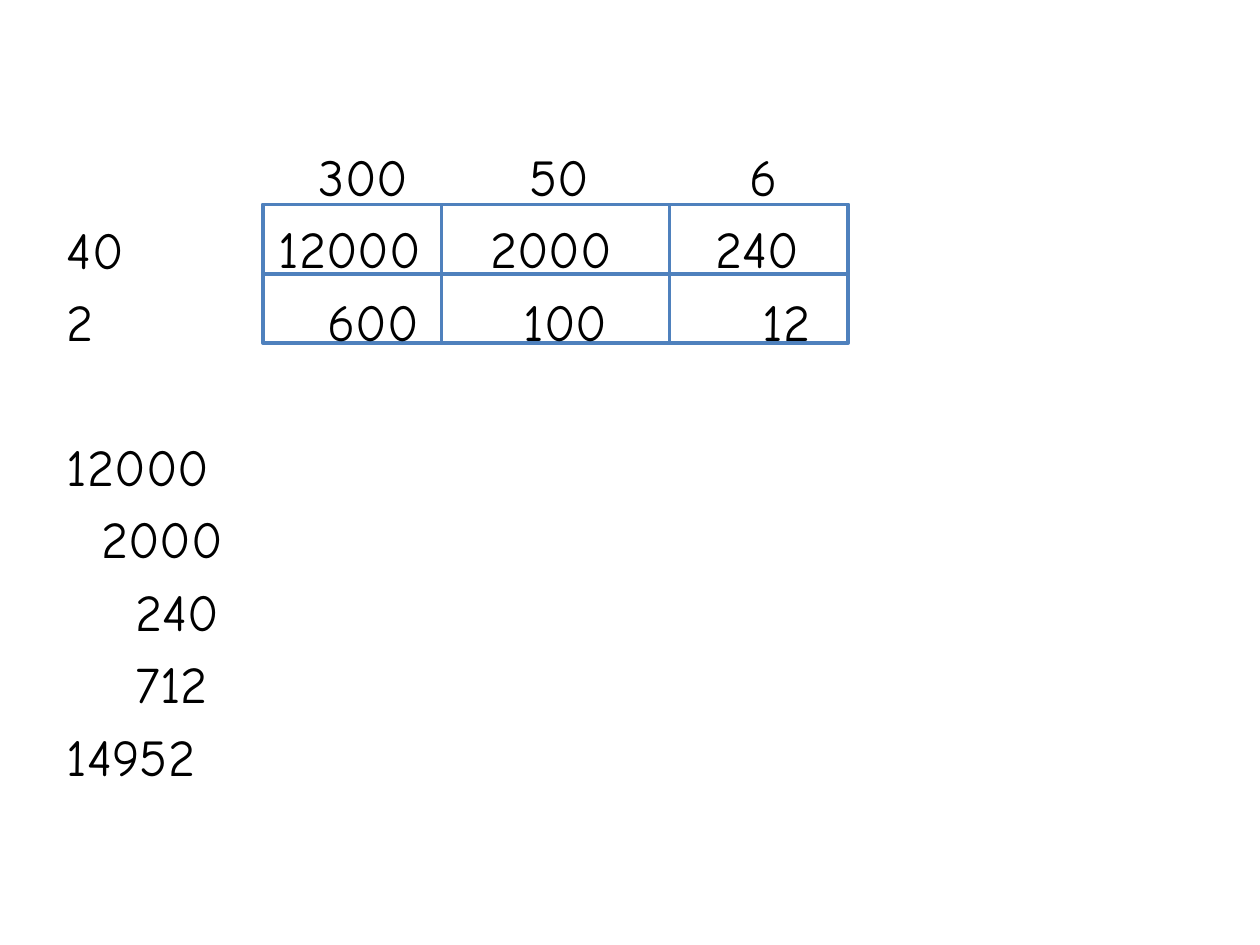
from lxml.etree import SubElement
from pptx import Presentation
from pptx.dml.color import RGBColor
from pptx.enum.shapes import MSO_SHAPE as Shape
from pptx.enum.text import MSO_ANCHOR as Anchor, MSO_AUTO_SIZE as AutoSize
from pptx.oxml.ns import qn
from pptx.util import Cm, Pt

FONT, TEXT_COLOR, GRID_COLOR = "Comic Neue", "000000", "4F81BD"
TEXT_SIZE, LINE_HEIGHT, LINE_GAP = 29.6, 35.5, 5.9

# Each row: (distance from the text edge in cm, number) for each column
GRID_NUMBERS = [
    [(5.08, "300"), (9.33, "50"), (13.75, "6")],
    [(4.27, "12000"), (8.53, "2000"), (13.08, "240")],
    [(5.26, "600"), (9.21, "100"), (14.03, "12")],
]
ROW_LABELS = ["40", "2"]
# Indent in cm, number
ADDITION = [(0, "12000"), (0.69, "2000"), (1.39, "240"), (1.39, "712"), (0, "14952")]

BODY_LEFT, BODY_TOP, SIDE_MARGIN = 1.1, 1.32, 0.25
FIRST_LINE, LINE_PITCH = 1.6, 1.46
GRID_LEFT, GRID_TOP, CELL_HEIGHT = 5.3, 4.12, 1.4
COLUMN_WIDTHS = [3.6, 4.6, 3.6]


def rgb(value):
    return RGBColor.from_string(value)


def set_frame(frame, top=0, side=0):
    frame.word_wrap = True
    frame.auto_size = AutoSize.NONE
    frame.vertical_anchor = Anchor.TOP
    frame.margin_top, frame.margin_bottom = Cm(top), Cm(0)
    frame.margin_left = frame.margin_right = Cm(side)


def add_line(frame, text, indent=0, gap=LINE_GAP):
    """Append one line, filling the empty first paragraph if there is one."""
    last = frame.paragraphs[-1]
    line = frame.add_paragraph() if last.runs else last
    line.line_spacing = Pt(LINE_HEIGHT)
    line.space_before = Pt(gap)
    line.space_after = Pt(0)
    props = line._p.get_or_add_pPr()
    props.set("marL", str(Cm(indent)))
    props.set("indent", "0")
    SubElement(props, qn("a:buNone"))
    run = line.add_run()
    run.text = text
    run.font.name = FONT
    run.font.size = Pt(TEXT_SIZE)
    run.font.color.rgb = rgb(TEXT_COLOR)


def add_labels_and_addition(slide):
    body = slide.placeholders[1]
    body.left, body.top = Cm(BODY_LEFT), Cm(BODY_TOP)
    body.width, body.height = Cm(22.86), Cm(16.2)
    frame = body.text_frame
    set_frame(frame, top=FIRST_LINE + LINE_PITCH, side=SIDE_MARGIN)
    for label in ROW_LABELS:
        add_line(frame, label)
    for index, (indent, number) in enumerate(ADDITION):
        skipped_line = LINE_HEIGHT + LINE_GAP if index == 0 else 0
        add_line(frame, number, indent, LINE_GAP + skipped_line)


def add_grid(slide):
    for column, width in enumerate(COLUMN_WIDTHS):
        left = GRID_LEFT + sum(COLUMN_WIDTHS[:column])
        for row in range(len(ROW_LABELS)):
            cell = slide.shapes.add_shape(
                Shape.RECTANGLE, Cm(left), Cm(GRID_TOP + row * CELL_HEIGHT),
                Cm(width), Cm(CELL_HEIGHT))
            cell.shadow.inherit = False
            cell.fill.background()
            cell.line.color.rgb = rgb(GRID_COLOR)
            cell.line.width = Pt(2)


def add_grid_numbers(slide):
    for row, numbers in enumerate(GRID_NUMBERS):
        top = BODY_TOP + FIRST_LINE + row * LINE_PITCH
        for offset, number in numbers:
            box = slide.shapes.add_textbox(
                Cm(BODY_LEFT + SIDE_MARGIN + offset), Cm(top), Cm(3.2), Cm(LINE_PITCH))
            set_frame(box.text_frame)
            add_line(box.text_frame, number, gap=0)


def main():
    deck = Presentation()
    deck.slide_width, deck.slide_height = Cm(25.4), Cm(19.05)
    slide = deck.slides.add_slide(deck.slide_layouts[1])
    title = slide.shapes.title._element
    title.getparent().remove(title)
    add_labels_and_addition(slide)
    add_grid(slide)
    add_grid_numbers(slide)
    deck.save("out.pptx")


if __name__ == "__main__":
    main()
